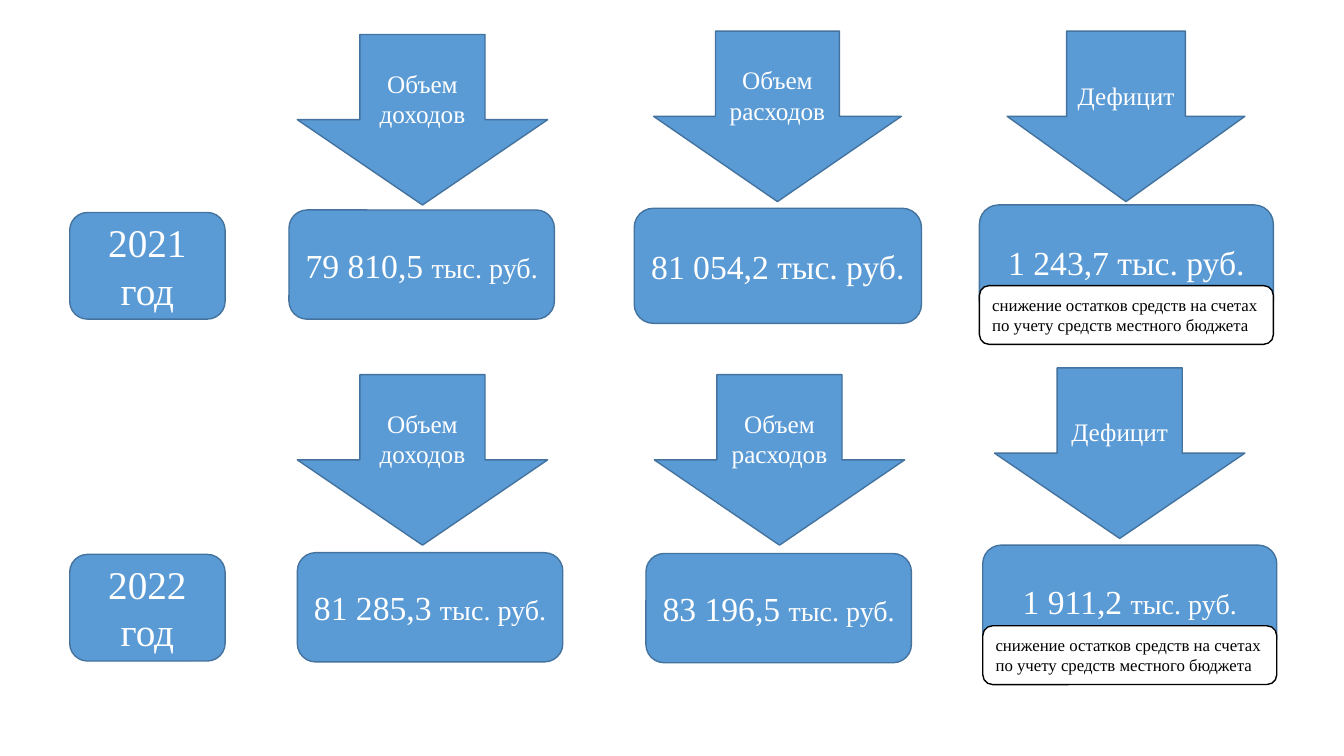
from dataclasses import dataclass

from pptx import Presentation
from pptx.dml.color import RGBColor
from pptx.enum.shapes import MSO_SHAPE
from pptx.enum.text import MSO_ANCHOR, PP_ALIGN
from pptx.util import Inches, Pt

BLUE = RGBColor(0x5B, 0x9B, 0xD5)
DARK_BLUE = RGBColor(0x43, 0x73, 0x9E)
WHITE = RGBColor(0xFF, 0xFF, 0xFF)
BLACK = RGBColor(0x00, 0x00, 0x00)
FONT = "Times New Roman"

# The slide is a grid of 16 columns by 9 rows
COLUMNS, ROWS = 16, 9
ARROW_HEIGHT = 2.03
YEAR_LEFT, YEAR_WIDTH, YEAR_HEIGHT = 0.83, 1.85, 1.27
NOTE_DROP, NOTE_HEIGHT = 0.96, 0.7

UNIT = "тыс. руб."
NOTE = "снижение остатков средств на счетах по учету средств местного бюджета"


@dataclass(frozen=True)
class Area:
    left: float
    top: float
    width: float
    height: float


@dataclass(frozen=True)
class Span:
    text: str
    size: int


@dataclass(frozen=True)
class Figure:
    label: str
    arrow: Area
    amount: Area
    spans: tuple[Span, ...]
    note: str = ""


@dataclass(frozen=True)
class Year:
    title: str
    top: float
    figures: tuple[Figure, ...]


def arrow_area(left: float, top: float, width: float = 2.98) -> Area:
    return Area(left, top, width, ARROW_HEIGHT)


def mixed(number: str) -> tuple[Span, ...]:
    """An amount whose unit is smaller than its number."""
    return Span(f"{number} ", 24), Span(UNIT, 20)


def even(number: str) -> tuple[Span, ...]:
    """An amount in a single size."""
    return (Span(f"{number} {UNIT}", 24),)


YEARS = (
    Year("2021 год", 2.53, (
        Figure("Объем доходов", arrow_area(3.54, 0.41),
               Area(3.44, 2.5, 3.16, 1.3), mixed("79 810,5")),
        Figure("Объем расходов", arrow_area(7.78, 0.37, 2.95),
               Area(7.55, 2.48, 3.42, 1.37), even("81 054,2")),
        Figure("Дефицит", arrow_area(11.99, 0.37, 2.83),
               Area(11.66, 2.44, 3.5, 1.37), even("1 243,7"), NOTE),
    )),
    Year("2022 год", 6.6, (
        Figure("Объем доходов", arrow_area(3.54, 4.46),
               Area(3.54, 6.58, 3.16, 1.3), mixed("81 285,3")),
        Figure("Объем расходов", arrow_area(7.79, 4.46),
               Area(7.69, 6.59, 3.16, 1.3), mixed("83 196,5")),
        Figure("Дефицит", arrow_area(11.84, 4.38),
               Area(11.7, 6.49, 3.5, 1.32), mixed("1 911,2"), NOTE),
    )),
)

deck = Presentation()
deck.slide_width, deck.slide_height = Inches(13.33), Inches(7.5)
page = deck.slides.add_slide(deck.slide_layouts[6])


def draw_box(kind: MSO_SHAPE, area: Area, spans: tuple[Span, ...],
             fill: RGBColor = BLUE, line: RGBColor = DARK_BLUE,
             ink: RGBColor = WHITE,
             align: PP_ALIGN = PP_ALIGN.CENTER) -> None:
    column = deck.slide_width / COLUMNS
    row = deck.slide_height / ROWS
    box = page.shapes.add_shape(
        kind, round(area.left * column), round(area.top * row),
        round(area.width * column), round(area.height * row))
    box.shadow.inherit = False
    box.fill.solid()
    box.fill.fore_color.rgb = fill
    box.line.color.rgb = line
    box.line.width = Pt(1)
    frame = box.text_frame
    frame.word_wrap = True
    frame.vertical_anchor = MSO_ANCHOR.MIDDLE
    para = frame.paragraphs[0]
    para.alignment = align
    for span in spans:
        run = para.add_run()
        run.text = span.text
        run.font.name = FONT
        run.font.size = Pt(span.size)
        run.font.color.rgb = ink


def draw_figure(figure: Figure) -> None:
    draw_box(MSO_SHAPE.DOWN_ARROW, figure.arrow, (Span(figure.label, 18),))
    draw_box(MSO_SHAPE.ROUNDED_RECTANGLE, figure.amount, figure.spans)
    if figure.note:
        amount = figure.amount
        area = Area(amount.left, amount.top + NOTE_DROP, amount.width, NOTE_HEIGHT)
        draw_box(MSO_SHAPE.ROUNDED_RECTANGLE, area, (Span(figure.note, 12),),
                 WHITE, BLACK, BLACK, PP_ALIGN.LEFT)


def draw_year(year: Year) -> None:
    area = Area(YEAR_LEFT, year.top, YEAR_WIDTH, YEAR_HEIGHT)
    draw_box(MSO_SHAPE.ROUNDED_RECTANGLE, area, (Span(year.title, 28),))
    for figure in year.figures:
        draw_figure(figure)


# One band of arrows and amounts per year
for budget_year in YEARS:
    draw_year(budget_year)

deck.save("out.pptx")
